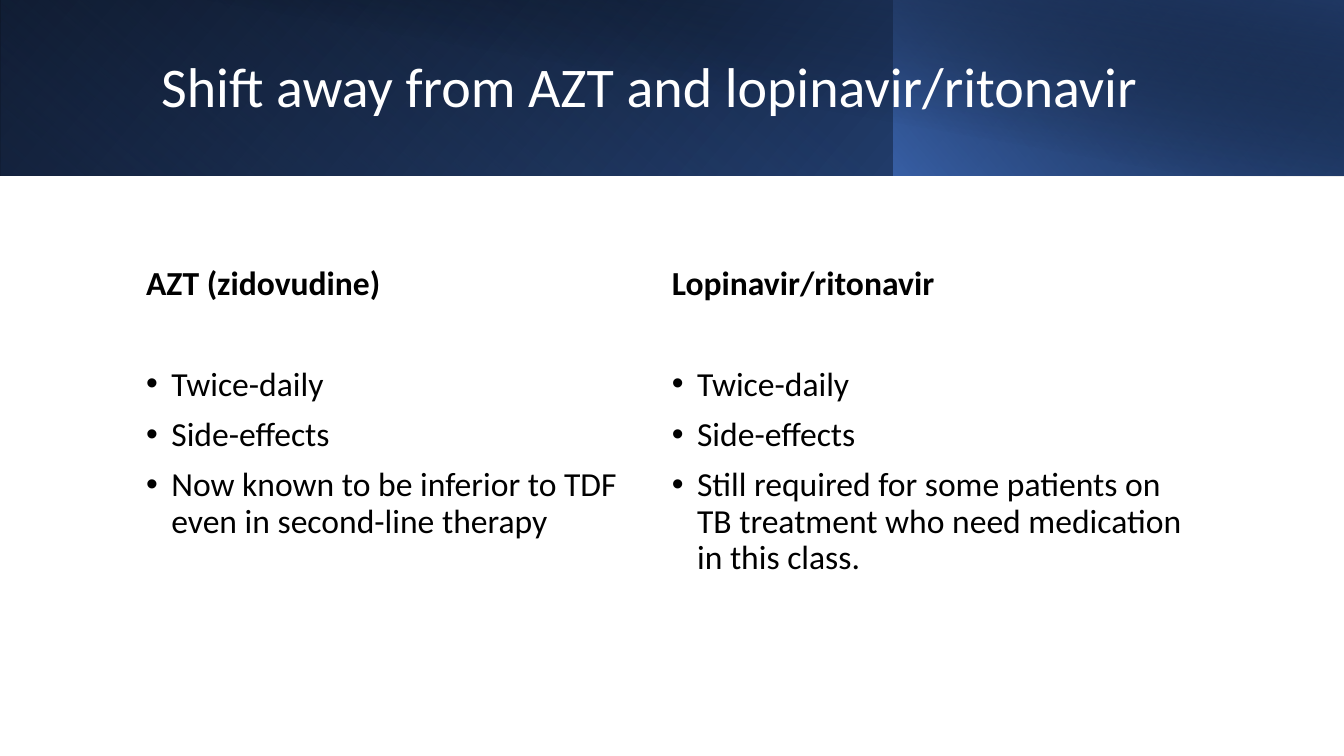
from lxml.etree import SubElement
from pptx import Presentation
from pptx.dml.color import RGBColor
from pptx.enum.shapes import MSO_SHAPE
from pptx.enum.text import MSO_ANCHOR
from pptx.oxml.ns import qn
from pptx.util import Pt

BLACK = RGBColor(0x00, 0x00, 0x00)
WHITE = RGBColor(0xFF, 0xFF, 0xFF)
BLUE = RGBColor(0x44, 0x72, 0xC4)
MID_BLUE = RGBColor(0x2F, 0x55, 0x97)
NAVY = RGBColor(0x20, 0x38, 0x64)

TITLE = "Shift away from AZT and lopinavir/ritonavir"
COLUMNS = [
    ("AZT (zidovudine)", [
        "Twice-daily",
        "Side-effects",
        "Now known to be inferior to TDF even in second-line therapy",
    ]),
    ("Lopinavir/ritonavir", [
        "Twice-daily",
        "Side-effects",
        "Still required for some patients on TB treatment who need medication in this class.",
    ]),
]
# left, width, height, rotation, flipped, angle, stops (position, colour, opacity)
BANNER = [
    (0, 960, 125.3, 0, True, 140, [(0, BLACK, 100), (100, MID_BLUE, 100)]),
    (0, 639.4, 125.3, 180, True, 230, [(20, BLUE, 0), (100, NAVY, 55)]),
    (638.6, 321.4, 125.3, 0, True, 220, [(0, BLUE, 66), (100, BLACK, 30)]),
    (36, 924, 126, 0, False, 280, [(50, BLACK, 0), (99, NAVY, 52)]),
]
BODY_LEFT, BODY_TOP, COLUMN_WIDTH, BODY_HEIGHT = 104.4, 190, 375.5, 240
INDENT = 18
HEADING = dict(space_before=Pt(0), line_spacing=0.9)
FIRST_BULLET = dict(space_before=Pt(46.4), line_spacing=0.9)
BULLET = dict(space_before=Pt(10), line_spacing=0.9)


def set_all(target, values):
    for name, value in values.items():
        setattr(target, name, value)


def add_band(slide, left, width, height, rotation, flipped, angle, stops):
    s = slide.shapes.add_shape(MSO_SHAPE.RECTANGLE, Pt(left), 0, Pt(width), Pt(height))
    s.shadow.inherit = False
    s.line.fill.background()
    s.rotation = rotation
    if flipped:
        s._element.spPr.find(qn("a:xfrm")).set("flipH", "1")
    s.fill.gradient()
    grad = s._element.spPr.find(qn("a:gradFill"))
    grad.find(qn("a:lin")).set("ang", str(angle * 60000))
    stop_list = grad.find(qn("a:gsLst"))
    for old in list(stop_list):
        stop_list.remove(old)
    for position, color, opacity in stops:
        stop = SubElement(stop_list, qn("a:gs"), pos=str(position * 1000))
        rgb = SubElement(stop, qn("a:srgbClr"), val=str(color))
        if opacity < 100:
            SubElement(rgb, qn("a:alpha"), val=str(opacity * 1000))


def add_box(slide, left, top, width, height, **frame):
    tf = slide.shapes.add_textbox(Pt(left), Pt(top), Pt(width), Pt(height)).text_frame
    set_all(tf, dict(word_wrap=True, **frame))
    return tf


def write(p, text, size, color, layout, bold=False):
    set_all(p, layout)
    r = p.add_run()
    r.text = text
    set_all(r.font, dict(name="Calibri", size=Pt(size), bold=bold))
    r.font.color.rgb = color


def add_bullet(p):
    pPr = p._p.get_or_add_pPr()
    pPr.set("marL", str(Pt(INDENT)))
    pPr.set("indent", str(-Pt(INDENT)))
    SubElement(pPr, qn("a:buFont"), typeface="Arial")
    SubElement(pPr, qn("a:buChar"), char="•")


def main():
    prs = Presentation()
    set_all(prs, dict(slide_width=Pt(960), slide_height=Pt(540)))
    slide = prs.slides.add_slide(prs.slide_layouts[6])
    for band in BANNER:
        add_band(slide, *band)

    tf = add_box(slide, 108, 23, 779, 81.4, vertical_anchor=MSO_ANCHOR.MIDDLE)
    write(tf.paragraphs[0], TITLE, 40, WHITE, dict(line_spacing=0.9))

    for i, (heading, bullets) in enumerate(COLUMNS):
        tf = add_box(slide, BODY_LEFT + i * COLUMN_WIDTH, BODY_TOP, COLUMN_WIDTH, BODY_HEIGHT,
                     margin_left=0, margin_right=0, margin_top=0, margin_bottom=0)
        write(tf.paragraphs[0], heading, 24, BLACK, HEADING, bold=True)
        for j, text in enumerate(bullets):
            p = tf.add_paragraph()
            write(p, text, 24, BLACK, BULLET if j else FIRST_BULLET)
            add_bullet(p)

    prs.save("out.pptx")


if __name__ == "__main__":
    main()
